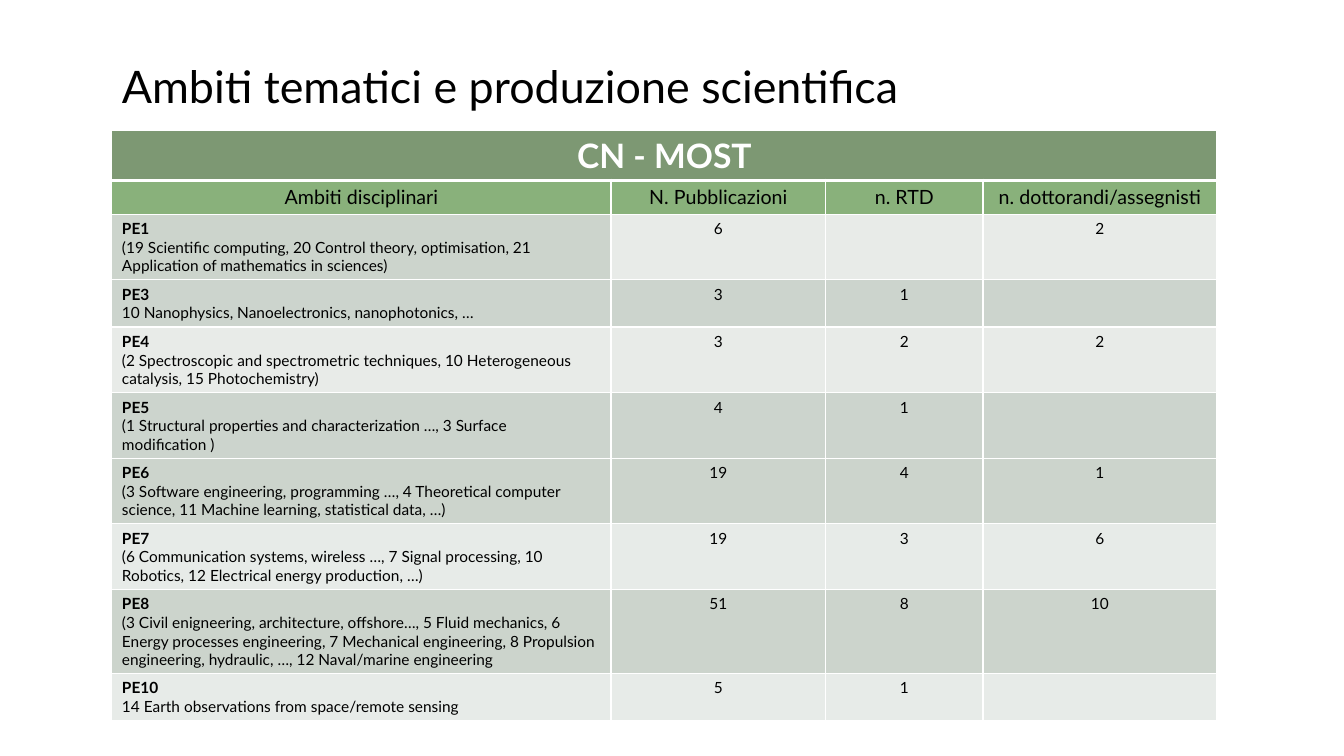
import pptx
import pptx.dml.color
import pptx.enum.text
import pptx.oxml
import pptx.oxml.ns
import pptx.util
from pptx.util import Inches

FONT = "Lato"
COLORS = {
    "black": "000000", "white": "FFFFFF", "banner": "275417", "header": "3B7D23",
    "sage": "CCD4CC", "mint": "CCD4CD", "pale": "E8EBE8", "mist": "E7EBE8",
}
CENTER = pptx.enum.text.PP_ALIGN.CENTER
LEFT = pptx.enum.text.PP_ALIGN.LEFT

COLUMN_WIDTHS = [4.95, 2.13, 1.56, 2.32]
BANNER_HEIGHT, HEADER_HEIGHT = 0.5, 0.33
HEADERS = ["Ambiti disciplinari", "N. Pubblicazioni", "n. RTD", "n. dottorandi/assegnisti"]
# code, topics, counts, text lines, fill of first cell, fill of counts
FIELDS = [
    ("PE1", "(19 Scientific computing, 20 Control theory, optimisation, 21 "
     "Application of mathematics in sciences)", ["6", "", "2"], 3, "sage", "pale"),
    ("PE3", "10 Nanophysics, Nanoelectronics, nanophotonics, …",
     ["3", "1", ""], 2, "mint", "mint"),
    ("PE4", "(2 Spectroscopic and spectrometric techniques, 10 Heterogeneous "
     "catalysis, 15 Photochemistry)", ["3", "2", "2"], 3, "pale", "pale"),
    ("PE5", "(1 Structural properties and characterization …, 3 Surface "
     "modification )", ["4", "1", ""], 3, "mint", "mint"),
    ("PE6", "(3 Software engineering, programming …, 4 Theoretical computer "
     "science, 11 Machine learning, statistical data, …)", ["19", "4", "1"], 3, "sage", "sage"),
    ("PE7", "(6 Communication systems, wireless …, 7 Signal processing, 10 "
     "Robotics, 12 Electrical energy production, …)", ["19", "3", "6"], 3, "mist", "mist"),
    ("PE8", "(3 Civil enigneering, architecture, offshore…, 5 Fluid mechanics, 6 "
     "Energy processes engineering, 7 Mechanical engineering, 8 Propulsion "
     "engineering, hydraulic, …, 12 Naval/marine engineering",
     ["51", "8", "10"], 4, "sage", "sage"),
    ("PE10", "14 Earth observations from space/remote sensing",
     ["5", "1", ""], 2, "mist", "mist"),
]


def rgb(name):
    return pptx.dml.color.RGBColor.from_string(COLORS[name])


def add_span(para, text, size, color="black", bold=False):
    span = para.add_run()
    span.text = text
    span.font.name = FONT
    span.font.size = pptx.util.Pt(size)
    span.font.bold = bold
    span.font.color.rgb = rgb(color)


def style_cell(cell, color, alpha=None, top=1, bottom=1):
    """Give a cell white borders (widths in points) and a fill (alpha in percent)."""
    props = cell._tc.get_or_add_tcPr()
    for side, width in (("L", 1), ("R", 1), ("T", top), ("B", bottom)):
        props.append(pptx.oxml.parse_xml(
            f'<a:ln{side} {pptx.oxml.ns.nsdecls("a")} w="{pptx.util.Pt(width)}"><a:solidFill>'
            f'<a:srgbClr val="{COLORS["white"]}"/></a:solidFill></a:ln{side}>'))
    cell.fill.solid()
    cell.fill.fore_color.rgb = rgb(color)
    if alpha:
        fill_color = props.find(pptx.oxml.ns.qn("a:solidFill"))[0]
        fill_color.append(pptx.oxml.parse_xml(
            f'<a:alpha {pptx.oxml.ns.nsdecls("a")} val="{alpha * 1000}"/>'))


def write_cell(cell, lines, size, align=CENTER, color="black"):
    """Write one paragraph for each (text, bold) pair."""
    for index, (text, bold) in enumerate(lines):
        frame = cell.text_frame
        para = frame.add_paragraph() if index else frame.paragraphs[0]
        para.alignment = align
        if text:
            add_span(para, text, size, color, bold)


def add_title(page, left, top, width, height):
    box = page.shapes.add_textbox(Inches(left), Inches(top), Inches(width), Inches(height))
    box.text_frame.word_wrap = True
    box.text_frame.vertical_anchor = pptx.enum.text.MSO_ANCHOR.MIDDLE
    para = box.text_frame.paragraphs[0]
    para.line_spacing = 0.9
    add_span(para, "Ambiti tematici e produzione scientifica", 32)


def add_fields_table(page, left, top):
    heights = [BANNER_HEIGHT, HEADER_HEIGHT]
    heights += [round(0.1 + 0.183 * field[3], 2) for field in FIELDS]
    frame = page.shapes.add_table(
        len(heights), len(COLUMN_WIDTHS), Inches(left), Inches(top),
        Inches(sum(COLUMN_WIDTHS)), Inches(sum(heights)))
    table = frame.table
    table.first_row = table.horz_banding = False
    for column, width in zip(table.columns, COLUMN_WIDTHS):
        column.width = Inches(width)
    for row, height in zip(table.rows, heights):
        row.height = Inches(height)

    for column, header in enumerate(HEADERS):
        style_cell(table.cell(0, column), "banner", alpha=60, bottom=3)
        style_cell(table.cell(1, column), "header", alpha=60, top=3)
        write_cell(table.cell(1, column), [(header, False)], 14)
    table.cell(0, 0).merge(table.cell(0, len(HEADERS) - 1))
    write_cell(table.cell(0, 0), [("CN - MOST", True)], 24, color="white")

    for row, (code, topics, counts, _, first_fill, count_fill) in enumerate(FIELDS, 2):
        style_cell(table.cell(row, 0), first_fill)
        write_cell(table.cell(row, 0), [(code, True), (topics, False)], 11, LEFT)
        for column, count in enumerate(counts, 1):
            style_cell(table.cell(row, column), count_fill)
            write_cell(table.cell(row, column), [(count, False)], 11)


def main():
    deck = pptx.Presentation()
    deck.slide_width, deck.slide_height = Inches(13.33), Inches(7.5)
    page = deck.slides.add_slide(deck.slide_layouts[6])
    add_title(page, 1.11, 0.16, 11.5, 1.45)
    add_fields_table(page, 1.11, 1.29)
    deck.save("out.pptx")


if __name__ == "__main__":
    main()
